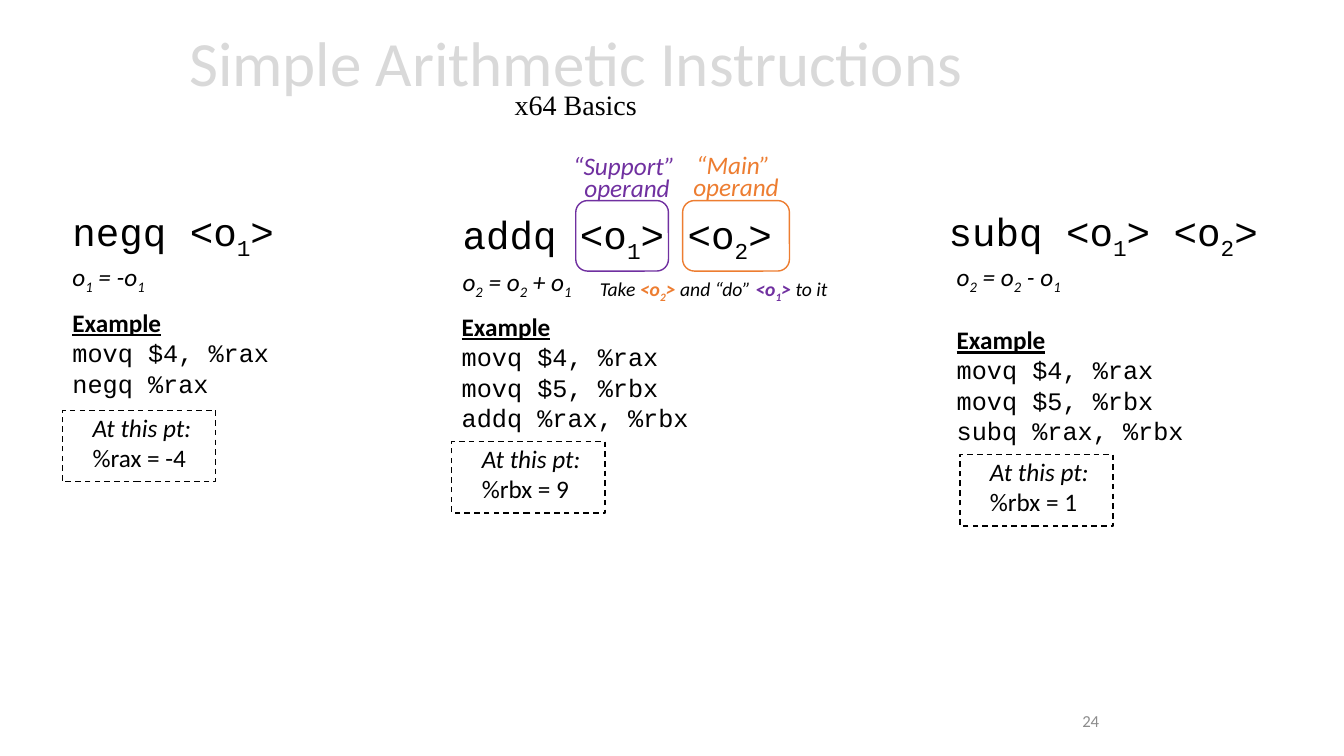
from dataclasses import dataclass, replace

from pptx import Presentation
from pptx.dml.color import RGBColor
from pptx.enum.dml import MSO_LINE
from pptx.enum.shapes import MSO_SHAPE
from pptx.enum.text import MSO_ANCHOR, MSO_AUTO_SIZE, PP_ALIGN
from pptx.util import Inches, Length, Pt

COLORS = {
    "black": "000000",
    "white": "FFFFFF",
    "title": "D9D9D9",
    "number": "8C8C8C",
    "main": "ED7D31",
    "support": "7030A0",
}
WIDTH, HEIGHT = Inches(13.33), Inches(7.5)


@dataclass(frozen=True)
class Style:
    size: float = 18
    font: str = "Calibri"
    color: str = "black"
    bold: bool = False
    italic: bool = False
    underline: bool = False


@dataclass(frozen=True)
class Box:
    """Left, top, width and height in percent of the slide."""
    x: float
    y: float
    w: float
    h: float

    def emu(self) -> tuple[Length, ...]:
        sides = ((self.x, WIDTH), (self.y, HEIGHT), (self.w, WIDTH), (self.h, HEIGHT))
        return tuple(Length(round(share * full / 100)) for share, full in sides)


@dataclass(frozen=True)
class Instruction:
    syntax: str
    syntax_box: Box
    effect: str
    effect_box: Box
    code: tuple[str, ...]
    code_box: Box
    result: str
    result_x: float
    result_y: float


@dataclass(frozen=True)
class Operand:
    name: str
    color: str
    frame: Box
    label: Box


PLAIN = Style()
ITALIC = Style(italic=True)
HEADING = Style(bold=True, underline=True)
CODE = Style(font="Courier New")
SYNTAX = replace(CODE, size=28)
NOTE = replace(ITALIC, size=14)

Line = list[tuple[str, Style]]

INSTRUCTIONS = (
    Instruction("negq <o_1>", Box(4.65, 26.8, 17.4, 7.6),
                "o_1 = -o_1", Box(4.65, 33.87, 7.43, 5.33),
                ("movq $4, %rax", "negq %rax"), Box(4.65, 40, 16.2, 13.47),
                "%rax = -4", 4.65, 54.27),
    Instruction("addq <o_1> <o_2>", Box(33.68, 27.2, 25.58, 7.6),
                "o_2 = o_2 + o_1", Box(33.68, 34.53, 10.13, 5.33),
                ("movq $4, %rax", "movq $5, %rbx", "addq %rax, %rbx"),
                Box(33.61, 40.53, 18.45, 17.47),
                "%rbx = 9", 33.61, 58.4),
    Instruction("subq <o_1> <o_2>", Box(69.84, 26.8, 25.06, 7.6),
                "o_2 = o_2 - o_1", Box(70.44, 33.87, 9.75, 5.33),
                ("movq $4, %rax", "movq $5, %rbx", "subq %rax, %rbx"),
                Box(70.44, 42.27, 18.45, 17.47),
                "%rbx = 1", 71.42, 60.13),
)
OPERANDS = (
    Operand("“Main” ", "main", Box(50.79, 26.53, 7.95, 9.33), Box(50.79, 20.13, 7.95, 7.47)),
    Operand("“Support” ", "support", Box(42.84, 26.53, 6.9, 9.33), Box(41.86, 20.27, 9.6, 7.47)),
)


def rgb(name: str) -> RGBColor:
    return RGBColor.from_string(COLORS[name])


def add_run(p, text: str, style: Style, subscript: bool = False) -> None:
    r = p.add_run()
    r.text = text
    font = r.font
    font.size, font.name = Pt(style.size), style.font
    font.bold, font.italic, font.underline = style.bold, style.italic, style.underline
    font.color.rgb = rgb(style.color)
    if subscript:
        r._r.get_or_add_rPr().set("baseline", "-25000")


def add_runs(p, text: str, style: Style) -> None:
    """Add text in which an underscore makes the next character a subscript."""
    first, *rest = text.split("_")
    add_run(p, first, style)
    for part in rest:
        add_run(p, part[0], style, subscript=True)
        if part[1:]:
            add_run(p, part[1:], style)


def add_text(s, box: Box, lines: list[Line], align=PP_ALIGN.LEFT, spacing=None, fixed: bool = False):
    """Add a text box; a fixed one wraps and centres its text vertically."""
    tf = s.shapes.add_textbox(*box.emu()).text_frame
    tf.word_wrap = fixed
    tf.auto_size = MSO_AUTO_SIZE.NONE if fixed else MSO_AUTO_SIZE.SHAPE_TO_FIT_TEXT
    tf.vertical_anchor = MSO_ANCHOR.MIDDLE if fixed else MSO_ANCHOR.TOP
    for i, line in enumerate(lines):
        p = tf.add_paragraph() if i else tf.paragraphs[0]
        p.alignment, p.line_spacing = align, spacing
        for text, style in line:
            add_runs(p, text, style)
    return tf


def add_frame(s, kind: MSO_SHAPE, box: Box, color: str):
    sp = s.shapes.add_shape(kind, *box.emu())
    sp.shadow.inherit = False
    sp.fill.background()
    sp.line.color.rgb = rgb(color)
    sp.line.width = Pt(1)
    return sp


def add_title(s) -> None:
    tf = add_text(s, Box(5.33, 1.2, 75.02, 19.33), [[]], PP_ALIGN.CENTER, 0.7, fixed=True)
    p = tf.paragraphs[0]
    add_run(p, "Simple Arithmetic Instructions", Style(45, color="title"))
    p.add_line_break()
    add_run(p, "x64 Basics", Style(20, "Times New Roman"))


def add_instruction(s, item: Instruction) -> None:
    add_text(s, item.syntax_box, [[(item.syntax, SYNTAX)]])
    add_text(s, item.effect_box, [[(item.effect, ITALIC)]])
    add_text(s, item.code_box, [[("Example", HEADING)]] + [[(code, CODE)] for code in item.code])
    sp = add_frame(s, MSO_SHAPE.RECTANGLE, Box(item.result_x, item.result_y, 11.4, 9.47), "black")
    sp.fill.solid()
    sp.fill.fore_color.rgb = rgb("white")
    sp.line.dash_style = MSO_LINE.DASH
    add_text(s, Box(item.result_x + 1.5, item.result_y - 0.4, 8.93, 9.47),
             [[("At this pt:", ITALIC)], [(item.result, PLAIN)]])


def add_operand(s, operand: Operand) -> None:
    add_frame(s, MSO_SHAPE.ROUNDED_RECTANGLE, operand.frame, operand.color)
    style = replace(ITALIC, color=operand.color)
    add_text(s, operand.label, [[(operand.name, style)], [("operand", style)]],
             PP_ALIGN.CENTER, Pt(16))


def main() -> None:
    prs = Presentation()
    prs.slide_width, prs.slide_height = WIDTH, HEIGHT
    s = prs.slides.add_slide(prs.slide_layouts[6])
    add_title(s)
    for item in INSTRUCTIONS:
        add_instruction(s, item)
    for operand in OPERANDS:
        add_operand(s, operand)
    add_text(s, Box(43.89, 36, 19.35, 4.53), [[
        ("Take ", NOTE),
        ("<o_2>", replace(NOTE, color="main", bold=True)),
        (" and “do” ", NOTE),
        ("<o_1>", replace(NOTE, color="support", bold=True)),
        (" to it", NOTE),
    ]])
    add_text(s, Box(60.02, 92.67, 22.51, 5.33), [[("24", Style(12, color="number"))]],
             PP_ALIGN.RIGHT, fixed=True)
    prs.save("out.pptx")


if __name__ == "__main__":
    main()
